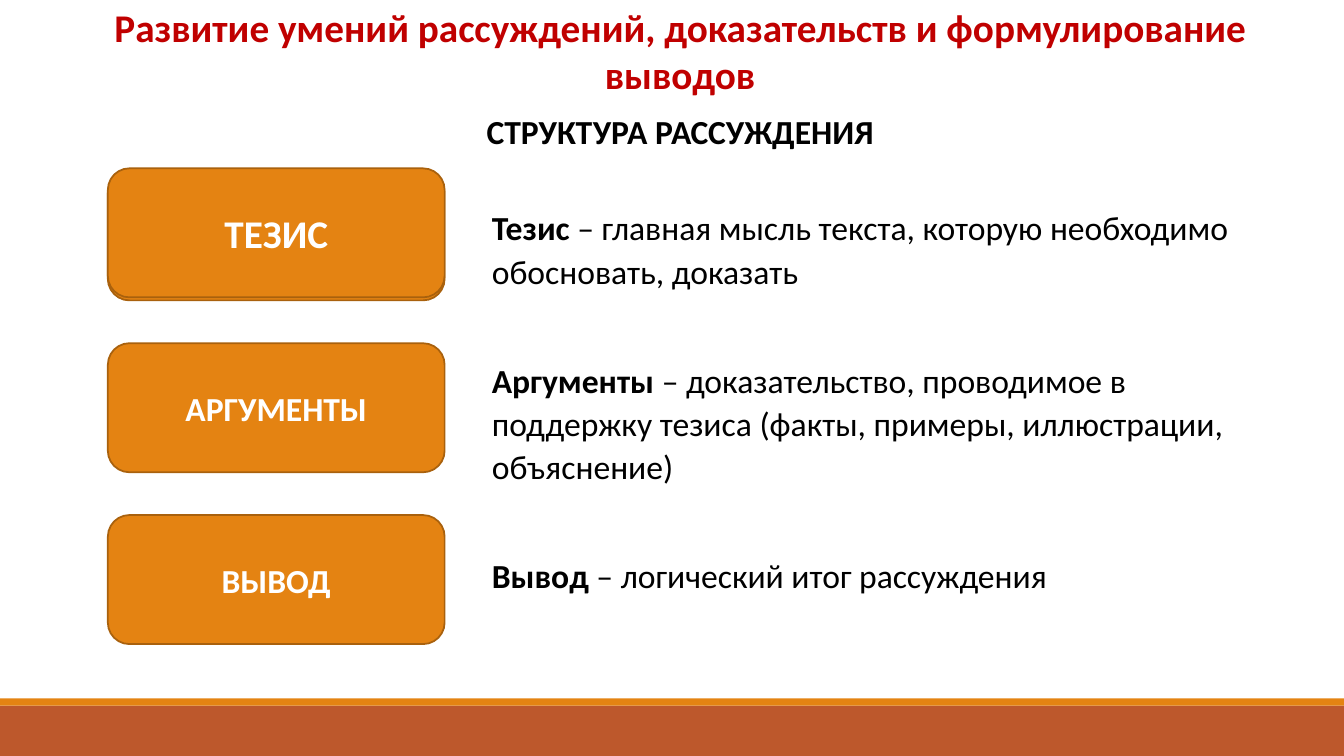
from pptx import Presentation
from pptx.dml.color import RGBColor
from pptx.enum.shapes import MSO_SHAPE
from pptx.enum.text import MSO_ANCHOR, MSO_AUTO_SIZE, PP_ALIGN
from pptx.util import Inches, Pt

ORANGE, RUST, BROWN = "E48312", "BD582C", "A9610D"
RED, BLACK, WHITE = "C00000", "000000", "FFFFFF"
STAGES = [("ТЕЗИС", 28), ("АРГУМЕНТЫ", 24), ("ВЫВОД", 24)]
DEFINITIONS = [
    ("Тезис ", "– главная мысль текста, которую необходимо обосновать, доказать"),
    ("Аргументы ", "– доказательство, проводимое в поддержку тезиса (факты, примеры, иллюстрации, объяснение)"),
    ("Вывод ", "– логический итог рассуждения"),
]


def color(value):
    return RGBColor.from_string(value)


def apply(target, values):
    for name, value in values.items():
        setattr(target, name, value)


def place(shape, box):
    names = ("left", "top", "width", "height")
    apply(shape, {name: Inches(length) for name, length in zip(names, box)})


def add_span(para, text, size, tint, bold=True):
    span = para.add_run()
    span.text = text
    apply(span.font, {"name": "Calibri", "size": Pt(size), "bold": bold})
    span.font.color.rgb = color(tint)


def add_block(page, kind, box, fill, line=None):
    block = page.shapes.add_shape(kind, *map(Inches, box))
    block.shadow.inherit = False
    block.fill.solid()
    block.fill.fore_color.rgb = color(fill)
    if line:
        block.line.color.rgb = color(line)
        block.line.width = Pt(1.25)
    else:
        block.line.fill.background()
    return block


def add_text_box(page, box):
    shape = page.shapes.add_textbox(*map(Inches, box))
    shape.text_frame.word_wrap = True
    return shape.text_frame


def add_footer(page, box):
    left, top, width, height = box
    stripe = 0.07
    add_block(page, MSO_SHAPE.RECTANGLE, (left, top + stripe, width, height - stripe), RUST)
    add_block(page, MSO_SHAPE.RECTANGLE, (left, top, width, stripe), ORANGE)


def add_title(page, box):
    title = page.shapes.title
    place(title, box)
    apply(title.text_frame, {"word_wrap": True, "auto_size": MSO_AUTO_SIZE.NONE,
                             "vertical_anchor": MSO_ANCHOR.TOP})
    para = title.text_frame.paragraphs[0]
    apply(para, {"alignment": PP_ALIGN.CENTER, "line_spacing": 1.0,
                 "space_before": Pt(0), "space_after": Pt(8)})
    add_span(para, "Развитие умений рассуждений, доказательств и формулирование выводов", 28, RED)


def add_subtitle(page, box):
    para = add_text_box(page, box).paragraphs[0]
    apply(para, {"alignment": PP_ALIGN.CENTER, "line_spacing": 1.07, "space_after": Pt(8)})
    add_span(para, "СТРУКТУРА РАССУЖДЕНИЯ", 24, BLACK)


def add_stages(page, box):
    left, top, width, height = box
    block_height, lift = 1.28, 0.03
    pitch = (height - block_height) / (len(STAGES) - 1)
    add_block(page, MSO_SHAPE.ROUNDED_RECTANGLE, (left, top, width, block_height), ORANGE, BROWN)
    for index, (label, size) in enumerate(STAGES):
        block_top = top + index * pitch if index else top - lift
        block = add_block(page, MSO_SHAPE.ROUNDED_RECTANGLE,
                          (left, block_top, width, block_height), ORANGE, BROWN)
        block.text_frame.vertical_anchor = MSO_ANCHOR.MIDDLE
        para = block.text_frame.paragraphs[0]
        para.alignment = PP_ALIGN.CENTER
        add_span(para, label, size, WHITE)


def add_definitions(page, box):
    frame = add_text_box(page, box)
    for index, (term, meaning) in enumerate(DEFINITIONS):
        para = frame.add_paragraph() if index else frame.paragraphs[0]
        apply(para, {"line_spacing": 1.07, "space_before": Pt(39 if index else 0),
                     "space_after": Pt(8)})
        add_span(para, term, 24, BLACK)
        add_span(para, meaning, 24, BLACK, False)


def main():
    deck = Presentation()
    apply(deck, {"slide_width": Inches(13.33), "slide_height": Inches(7.5)})
    page = deck.slides.add_slide(deck.slide_layouts[5])
    add_footer(page, (0, 6.93, 13.33, 0.57))
    add_title(page, (0.49, -0.02, 12.51, 1.04))
    add_subtitle(page, (1.07, 1.02, 11.35, 0.51))
    add_stages(page, (1.07, 1.7, 3.34, 4.69))
    add_definitions(page, (4.78, 1.98, 7.52, 3.99))
    deck.save("out.pptx")


if __name__ == "__main__":
    main()
